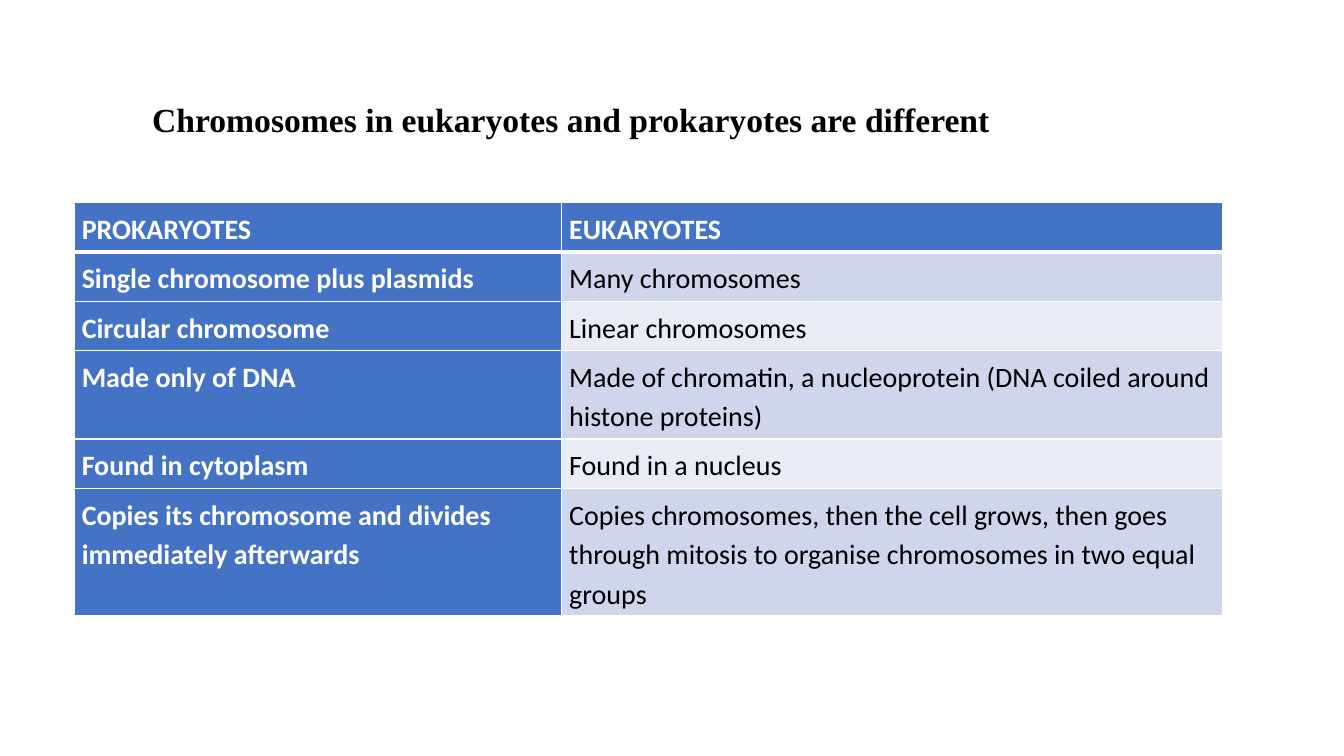
from typing import NamedTuple

from lxml.etree import SubElement as Sub
from pptx import Presentation
from pptx.dml.color import RGBColor as RGB
from pptx.enum.text import MSO_ANCHOR as Anchor, MSO_AUTO_SIZE as Fit, PP_ALIGN as Align
from pptx.oxml.ns import qn
from pptx.slide import Slide
from pptx.table import _Cell as Cell
from pptx.text.text import _Paragraph as Para
from pptx.util import Pt

WHITE = RGB(0xFF, 0xFF, 0xFF)
BLACK = RGB(0, 0, 0)
BLUE = RGB(0x44, 0x72, 0xC4)
DARK = RGB(0xCF, 0xD5, 0xEA)
LIGHT = RGB(0xE9, 0xEB, 0xF5)

LEFT, TOP = 53, 144.9
COLS = (348.2, 472)
LINE, PAD = 28, 7.2


class Row(NamedTuple):
    pro: str
    eu: str
    lines: int = 1


ROWS = (
    Row("PROKARYOTES", "EUKARYOTES"),
    Row("Single chromosome plus plasmids", "Many chromosomes"),
    Row("Circular chromosome", "Linear chromosomes"),
    Row("Made only of DNA",
        "Made of chromatin, a nucleoprotein (DNA coiled around histone proteins)", 2),
    Row("Found in cytoplasm", "Found in a nucleus"),
    Row("Copies its chromosome and divides immediately afterwards",
        "Copies chromosomes, then the cell grows, then goes through mitosis "
        "to organise chromosomes in two equal groups", 3),
)


def add_run(para: Para, text: str, face: str, size: float, color: RGB, bold: bool) -> None:
    run = para.add_run()
    run.text = text
    font = run.font
    font.name, font.size, font.bold = face, Pt(size), bold
    font.color.rgb = color


def add_edge(cell: Cell, side: str, width: float) -> None:
    """Draw one white border; side is L, R, T or B."""
    line = Sub(cell._tc.get_or_add_tcPr(), qn(f"a:ln{side}"), w=str(Pt(width)))
    fill = Sub(line, qn("a:solidFill"))
    Sub(fill, qn("a:srgbClr"), val=str(WHITE))


def fill_cell(cell: Cell, text: str, row: int, col: int) -> None:
    head = row == 0 or col == 0
    heavy = {(0, "B"), (1, "T")}
    for side in "LRTB":
        add_edge(cell, side, 3 if (row, side) in heavy else 1)
    cell.fill.solid()
    cell.fill.fore_color.rgb = BLUE if head else DARK if row % 2 else LIGHT
    cell.margin_left = cell.margin_right = Pt(5.4)
    cell.margin_top = cell.margin_bottom = Pt(PAD / 2)
    para = cell.text_frame.paragraphs[0]
    para.line_spacing = 1.15
    add_run(para, text, "Calibri", 20, WHITE if head else BLACK, head)


def add_title(slide: Slide) -> None:
    title = slide.shapes.title
    title.left, title.top = Pt(101.5), Pt(67)
    title.width, title.height = Pt(672.5), Pt(36)
    frame = title.text_frame
    frame.word_wrap = True
    frame.auto_size = Fit.SHAPE_TO_FIT_TEXT
    frame.vertical_anchor = Anchor.TOP
    para = frame.paragraphs[0]
    para.alignment = Align.LEFT
    add_run(para, "Chromosomes in eukaryotes and prokaryotes are different",
            "Times New Roman", 24, BLACK, True)


def add_grid(slide: Slide) -> None:
    highs = [LINE * row.lines + PAD for row in ROWS]
    grid = slide.shapes.add_table(len(ROWS), len(COLS), Pt(LEFT), Pt(TOP),
                                  Pt(sum(COLS)), Pt(sum(highs))).table
    for col, width in enumerate(COLS):
        grid.columns[col].width = Pt(width)
    for i, row in enumerate(ROWS):
        grid.rows[i].height = Pt(highs[i])
        for col, text in enumerate((row.pro, row.eu)):
            fill_cell(grid.cell(i, col), text, i, col)


def main() -> None:
    deck = Presentation()
    deck.slide_width, deck.slide_height = Pt(960), Pt(540)
    slide = deck.slides.add_slide(deck.slide_layouts[5])
    add_title(slide)
    add_grid(slide)
    deck.save("out.pptx")


if __name__ == "__main__":
    main()
